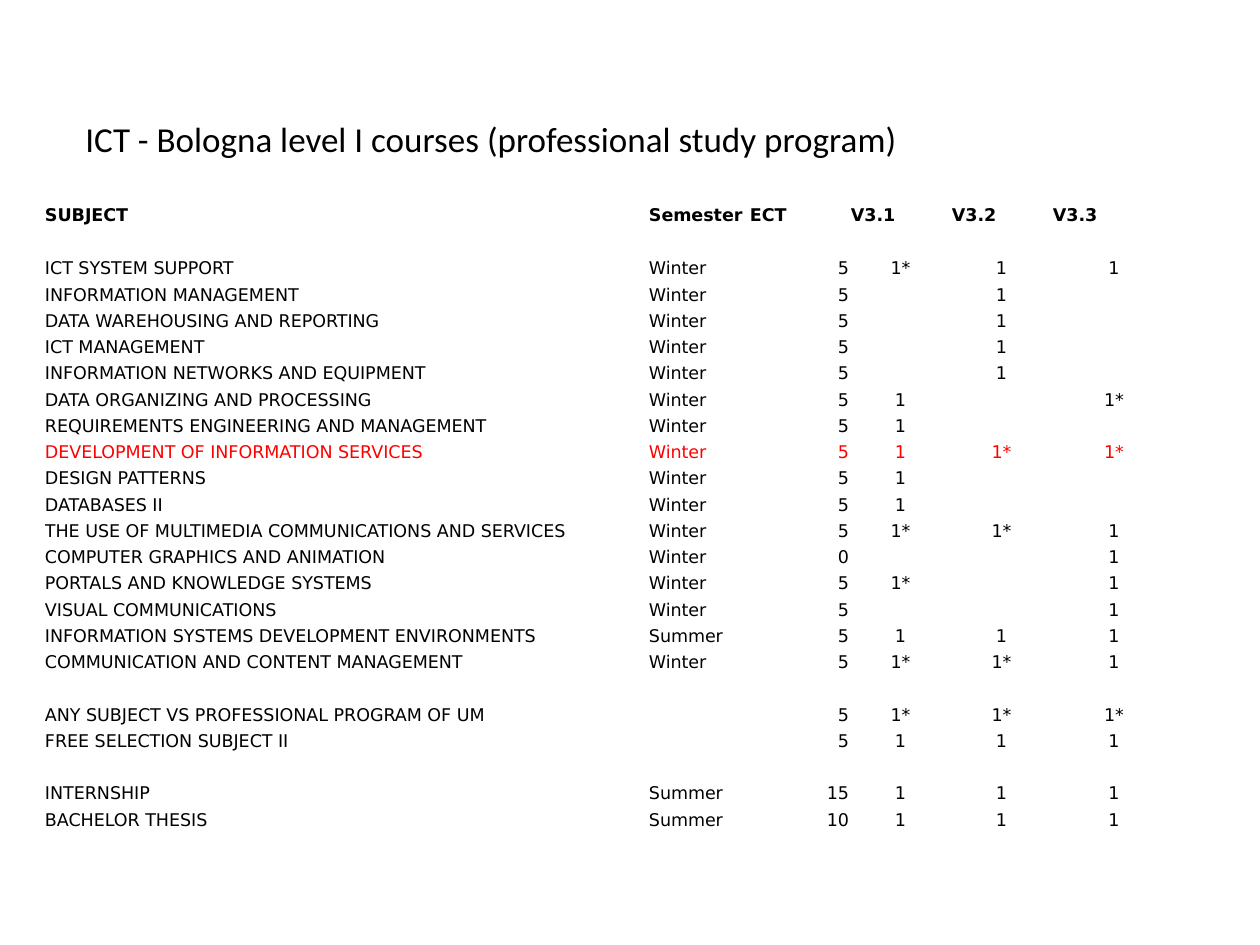
import dataclasses

import lxml.etree
import pptx
import pptx.dml.color
import pptx.enum.text
import pptx.oxml.ns
import pptx.util

RGB = pptx.dml.color.RGBColor
ALIGN = pptx.enum.text.PP_ALIGN
ANCHOR = pptx.enum.text.MSO_ANCHOR
qn = pptx.oxml.ns.qn


@dataclasses.dataclass
class Theme:
    text: str = "000000"
    highlight: str = "FF0000"
    border: str = "FFFFFF"
    title_font: str = "Calibri"
    table_font: str = "DejaVu Sans"
    title_size: int = 20
    table_size: int = 10


theme = Theme()


def px(n):
    return pptx.util.Emu(round(n * 914400 / 126))


def write(tf, text, *, font, size, color, bold=False, align=ALIGN.LEFT):
    p = tf.paragraphs[0]
    p.alignment = align
    if not text:
        # An empty cell needs its own type size, or its row grows.
        lxml.etree.SubElement(p._p, qn("a:endParaRPr"), sz=str(size * 100))
        return
    r = p.add_run()
    r.text = text
    r.font.name = font
    r.font.size = pptx.util.Pt(size)
    r.font.bold = bold
    r.font.color.rgb = RGB.from_string(color)


prs = pptx.Presentation()
prs.slide_width, prs.slide_height = px(1260), px(945)
s = prs.slides.add_slide(prs.slide_layouts[6])

# Title
tf = s.shapes.add_textbox(px(73), px(66), px(1124), px(145)).text_frame
tf.word_wrap = True
tf.vertical_anchor = ANCHOR.MIDDLE
write(tf, "ICT - Bologna level I courses (professional study program)",
      font=theme.title_font, size=theme.title_size, color=theme.text)

# Course table
HIGHLIGHTED = "DEVELOPMENT OF INFORMATION SERVICES"
BLANK = ("",) * 6
rows = [
    ("SUBJECT", "Semester", "ECT", "V3.1", "V3.2", "V3.3"),
    ("ICT SYSTEM SUPPORT", "Winter", "5", "1*", "1", "1"),
    ("INFORMATION MANAGEMENT", "Winter", "5", "", "1", ""),
    ("DATA WAREHOUSING AND REPORTING", "Winter", "5", "", "1", ""),
    ("ICT MANAGEMENT", "Winter", "5", "", "1", ""),
    ("INFORMATION NETWORKS AND EQUIPMENT", "Winter", "5", "", "1", ""),
    ("DATA ORGANIZING AND PROCESSING", "Winter", "5", "1", "", "1*"),
    ("REQUIREMENTS ENGINEERING AND MANAGEMENT", "Winter", "5", "1", "", ""),
    (HIGHLIGHTED, "Winter", "5", "1", "1*", "1*"),
    ("DESIGN PATTERNS", "Winter", "5", "1", "", ""),
    ("DATABASES II", "Winter", "5", "1", "", ""),
    ("THE USE OF MULTIMEDIA COMMUNICATIONS AND SERVICES", "Winter", "5", "1*", "1*", "1"),
    ("COMPUTER GRAPHICS AND ANIMATION", "Winter", "0", "", "", "1"),
    ("PORTALS AND KNOWLEDGE SYSTEMS", "Winter", "5", "1*", "", "1"),
    ("VISUAL COMMUNICATIONS", "Winter", "5", "", "", "1"),
    ("INFORMATION SYSTEMS DEVELOPMENT ENVIRONMENTS", "Summer", "5", "1", "1", "1"),
    ("COMMUNICATION AND CONTENT MANAGEMENT", "Winter", "5", "1*", "1*", "1"),
    BLANK,
    ("ANY SUBJECT VS PROFESSIONAL PROGRAM OF UM", "", "5", "1*", "1*", "1*"),
    ("FREE SELECTION SUBJECT II", "", "5", "1", "1", "1"),
    BLANK,
    ("INTERNSHIP", "Summer", "15", "1", "1", "1"),
    ("BACHELOR THESIS", "Summer", "10", "1", "1", "1"),
]
col_widths = [604, 101, 101, 101, 101, 124]
col_aligns = [ALIGN.LEFT] * 2 + [ALIGN.RIGHT] + [ALIGN.CENTER] * 3
table_height, header_height = 627, 49

table = s.shapes.add_table(len(rows), len(col_widths), px(44), px(204),
                           px(sum(col_widths)), px(table_height)).table
table.first_row = table.horz_banding = False
for column, width in zip(table.columns, col_widths):
    column.width = px(width)

body_row_height = px(table_height - header_height) // (len(rows) - 1)
for i, row in enumerate(rows):
    header = i == 0
    table.rows[i].height = px(header_height) if header else body_row_height
    color = theme.highlight if row[0] == HIGHLIGHTED else theme.text
    for j, text in enumerate(row):
        cell = table.cell(i, j)
        cell.margin_left = cell.margin_right = cell.margin_top = px(1)
        cell.margin_bottom = 0
        cell.vertical_anchor = ANCHOR.TOP if header else ANCHOR.BOTTOM
        tcPr = cell._tc.get_or_add_tcPr()
        for side in ("lnL", "lnR", "lnT", "lnB"):
            ln = lxml.etree.SubElement(tcPr, qn(f"a:{side}"), w=str(pptx.util.Pt(1)))
            fill = lxml.etree.SubElement(ln, qn("a:solidFill"))
            lxml.etree.SubElement(fill, qn("a:srgbClr"), val=theme.border)
        cell.fill.background()
        write(cell.text_frame, text, font=theme.table_font, size=theme.table_size,
              color=color, bold=header, align=ALIGN.LEFT if header else col_aligns[j])

prs.save("out.pptx")
